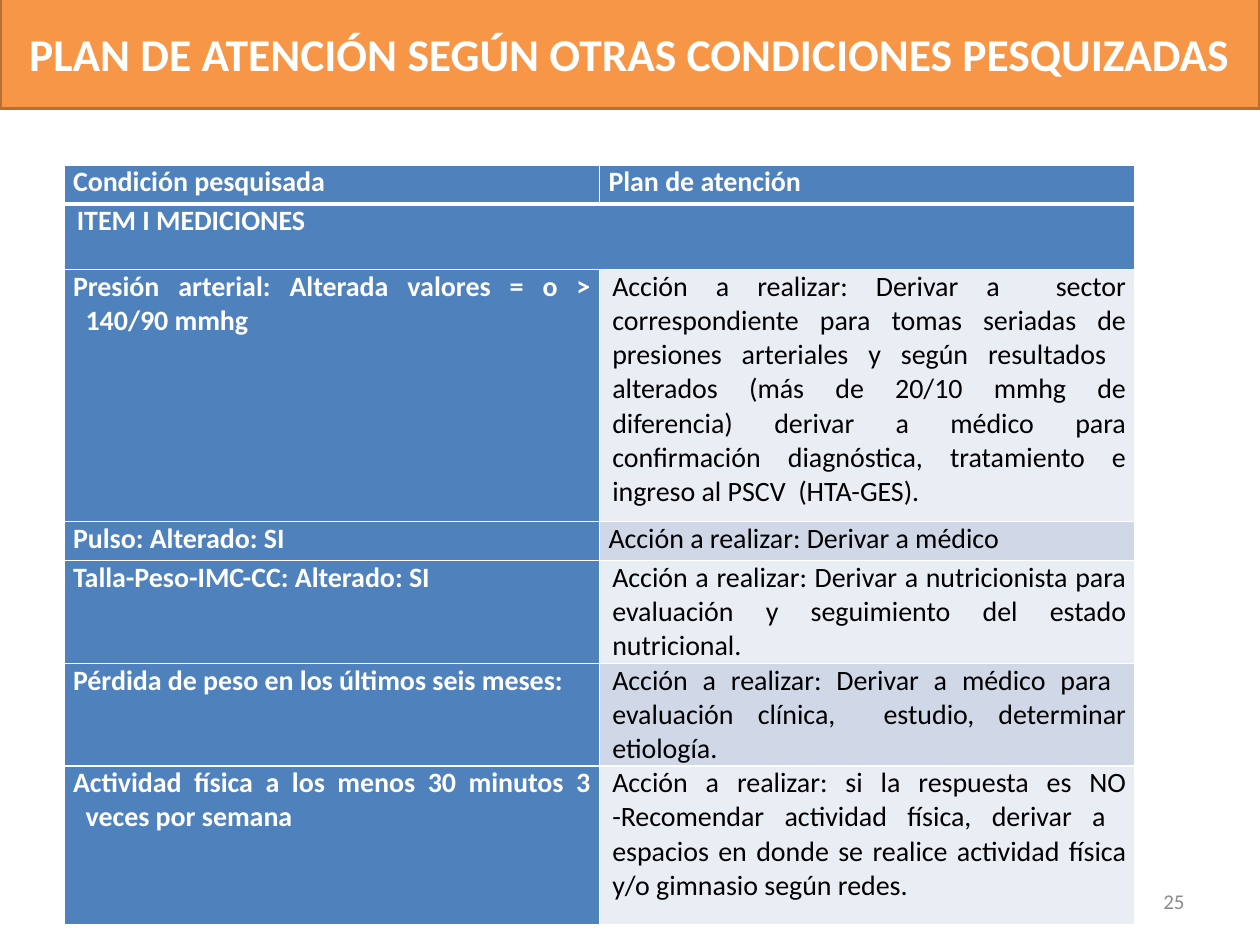
"""Build the care plan slide: banner, table of conditions and page number."""
from dataclasses import dataclass

from lxml import etree
from pptx import Presentation
from pptx.dml.color import RGBColor
from pptx.enum.shapes import MSO_SHAPE
from pptx.enum.text import MSO_ANCHOR, PP_ALIGN
from pptx.oxml.ns import qn
from pptx.util import Inches, Pt

RECT = MSO_SHAPE.RECTANGLE
MIDDLE = MSO_ANCHOR.MIDDLE
LEFT, RIGHT = PP_ALIGN.LEFT, PP_ALIGN.RIGHT
CENTER, JUST = PP_ALIGN.CENTER, PP_ALIGN.JUSTIFY
WIDE, HIGH = 10, 7.5
COLS, ROWS = 100, 75


@dataclass(frozen=True)
class Theme:
    """Colours, font and type sizes of the slide."""
    face: str = "Calibri"
    white: str = "FFFFFF"
    black: str = "000000"
    gray: str = "8C8C8C"
    blue: str = "4F81BD"
    light: str = "E9EDF4"
    dark: str = "D0D8E8"
    orange: str = "F79646"
    brown: str = "B76F34"
    head: int = 26
    body: int = 16
    small: int = 12


@dataclass(frozen=True)
class Box:
    """An area in grid columns and rows."""
    col: float
    row: float
    wide: float
    high: float

    def place(self) -> tuple:
        """Return left, top, width and height as lengths."""
        return across(self.col), down(self.row), across(self.wide), down(self.high)


@dataclass(frozen=True)
class Style:
    """The look of one paragraph."""
    size: int
    color: str
    bold: bool = False
    align: PP_ALIGN = JUST
    left: float = 0
    first: float = 0


@dataclass(frozen=True)
class Entry:
    """A table row: condition, plan and height in grid rows."""
    name: str
    plan: str
    high: float
    left: float = 1
    inset: float = 0.3


THEME = Theme()
ENTRIES = [
    Entry("Condición pesquisada", "Plan de atención", 3.1, 0, 0),
    Entry("ITEM I MEDICIONES", "", 5.2, 0.3),
    Entry("Presión arterial: Alterada valores = o > 140/90 mmhg",
          "Acción a realizar: Derivar a  sector correspondiente para tomas "
          "seriadas de presiones arteriales y según resultados  alterados "
          "(más de 20/10 mmhg de diferencia) derivar a médico para "
          "confirmación diagnóstica, tratamiento e ingreso al PSCV  (HTA-GES).", 20),
    Entry("Pulso: Alterado: SI", "Acción a realizar: Derivar a médico", 3.1, inset=0),
    Entry("Talla-Peso-IMC-CC: Alterado: SI",
          "Acción a realizar: Derivar a nutricionista para evaluación y "
          "seguimiento del estado nutricional.", 8),
    Entry("Pérdida de peso en los últimos seis meses:",
          "Acción a realizar: Derivar a médico para  evaluación clínica,  "
          "estudio, determinar etiología.", 8),
    Entry("Actividad física a los menos 30 minutos 3 veces por semana",
          "Acción a realizar: si la respuesta es NO -Recomendar actividad "
          "física, derivar a  espacios en donde se realice actividad física "
          "y/o gimnasio según redes.", 12.6),
]


def across(cols: float) -> int:
    """Turn grid columns into a length."""
    return Inches(cols * WIDE / COLS)


def down(rows: float) -> int:
    """Turn grid rows into a length."""
    return Inches(rows * HIGH / ROWS)


def apply(obj, form: dict) -> None:
    """Set each attribute named in the format."""
    for key, val in form.items():
        setattr(obj, key, val)


def paint(fill, color: str) -> None:
    """Give a fill one solid colour."""
    fill.solid()
    fill.fore_color.rgb = RGBColor.from_string(color)


def write(frame, text: str, style: Style) -> None:
    """Put one styled paragraph in a text frame."""
    frame.word_wrap = True
    para = frame.paragraphs[0]
    para.alignment = style.align
    props = para._p.get_or_add_pPr()
    props.set("marL", str(across(style.left)))
    props.set("indent", str(across(style.first)))
    run = para.add_run()
    run.text = text
    apply(run.font, {"name": THEME.face, "size": Pt(style.size), "bold": style.bold})
    run.font.color.rgb = RGBColor.from_string(style.color)


def edge(cell, base: float) -> None:
    """Draw white borders round a cell, with the given bottom width."""
    props = cell._tc.get_or_add_tcPr()
    for side, width in {"L": 1, "R": 1, "T": 1, "B": base}.items():
        line = etree.SubElement(props, qn(f"a:ln{side}"), w=str(Pt(width)))
        solid = etree.SubElement(line, qn("a:solidFill"))
        etree.SubElement(solid, qn("a:srgbClr"), val=THEME.white)


def fill_cell(cell, text: str, color: str, style: Style, base: float) -> None:
    """Draw one table cell."""
    side = across(0.7)
    apply(cell, {"margin_left": side, "margin_right": side,
                 "margin_top": 0, "margin_bottom": 0})
    edge(cell, base)
    paint(cell.fill, color)
    if text:
        write(cell.text_frame, text, style)


def add_plan(slide, box: Box, items: list[Entry]) -> None:
    """Draw the table of conditions and plans."""
    table = slide.shapes.add_table(len(items), 2, *box.place()).table
    for col in table.columns:
        col.width = across(box.wide / 2)
    for num, item in enumerate(items):
        table.rows[num].height = down(item.high)
        top = num < 2
        base = 1 if num else 3
        hang = -item.left if not top else 0
        band = THEME.dark if num % 2 else THEME.light
        name = Style(THEME.body, THEME.white, True, left=item.left, first=hang)
        plan = Style(THEME.body, THEME.white if top else THEME.black, top, left=item.inset)
        fill_cell(table.cell(num, 0), item.name, THEME.blue, name, base)
        fill_cell(table.cell(num, 1), item.plan, THEME.blue if top else band, plan, base)
    table.cell(1, 0).merge(table.cell(1, 1))


def add_banner(slide, box: Box, text: str) -> None:
    """Draw the title banner."""
    shape = slide.shapes.add_shape(RECT, *box.place())
    shape.shadow.inherit = False
    paint(shape.fill, THEME.orange)
    paint(shape.line.fill, THEME.brown)
    shape.line.width = Pt(2)
    shape.text_frame.vertical_anchor = MIDDLE
    write(shape.text_frame, text, Style(THEME.head, THEME.white, True, CENTER))


def add_page(slide, box: Box, text: str) -> None:
    """Draw the page number."""
    frame = slide.shapes.add_textbox(*box.place()).text_frame
    frame.vertical_anchor = MIDDLE
    write(frame, text, Style(THEME.small, THEME.gray, align=RIGHT))


def main() -> None:
    """Build and save the slide."""
    deck = Presentation()
    apply(deck, {"slide_width": Inches(WIDE), "slide_height": Inches(HIGH)})
    slide = deck.slides.add_slide(deck.slide_layouts[6])
    add_plan(slide, Box(5.1, 13.1, 85, 60.1), ENTRIES)
    add_banner(slide, Box(0, -0.2, 100, 8.8),
               "PLAN DE ATENCIÓN SEGÚN OTRAS CONDICIONES PESQUIZADAS")
    add_page(slide, Box(71.7, 69.5, 23.3, 4), "25")
    deck.save("out.pptx")


if __name__ == "__main__":
    main()
